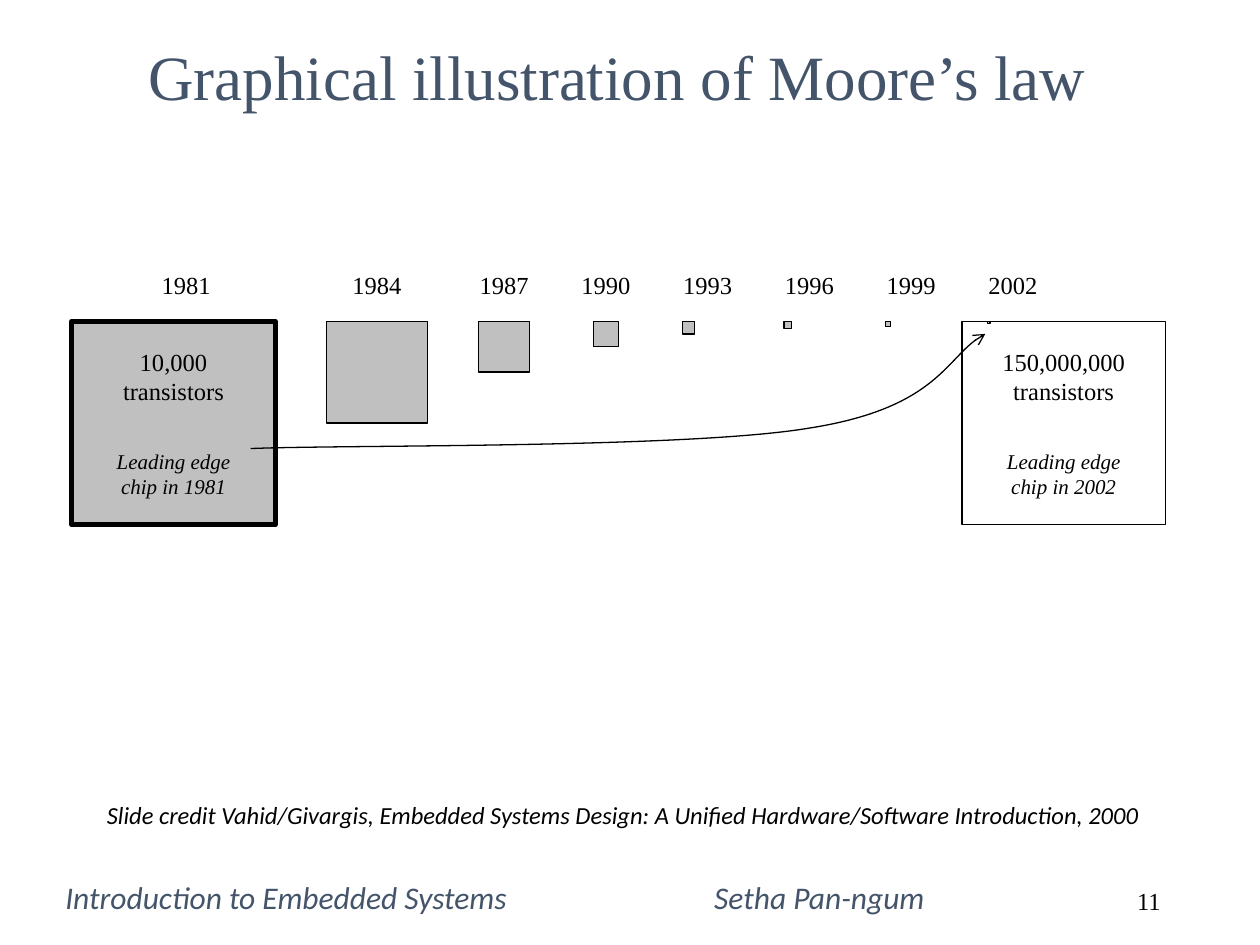
from lxml import etree
from pptx import Presentation
from pptx.dml.color import RGBColor
from pptx.enum.shapes import MSO_SHAPE
from pptx.enum.text import MSO_ANCHOR, PP_ALIGN
from pptx.oxml.ns import qn
from pptx.util import Inches, Pt

RECT = MSO_SHAPE.RECTANGLE
LEFT, CENTER, RIGHT = PP_ALIGN.LEFT, PP_ALIGN.CENTER, PP_ALIGN.RIGHT
TOP, MIDDLE = MSO_ANCHOR.TOP, MSO_ANCHOR.MIDDLE

# Content
TITLE = "Graphical illustration of Moore’s law"
CREDIT = ("Slide credit Vahid/Givargis, Embedded Systems Design: "
          "A Unified Hardware/Software Introduction, 2000")
FOOTER = "Introduction to Embedded Systems\tSetha Pan-ngum"
PAGE = "11"

# Year, label column, label columns wide, square column, square side (grid units)
GENERATIONS = [
    ("1981", 3, 3, 0, 8),
    ("1984", 10, 4, 10, 4),
    ("1987", 15, 4, 16, 2),
    ("1990", 19, 4, 20.5, 1),
    ("1993", 23, 4, 24, 0.5),
    ("1996", 27, 4, 28, 0.3),
    ("1999", 31, 4, 32, 0.2),
    ("2002", 35, 4, 36, 0.1),
]
# Column, transistor count, caption
CHIPS = [
    (0, ["10,000", "transistors"], ["Leading edge", "chip in 1981"]),
    (35, ["150,000,000", "transistors"], ["Leading edge", "chip in 2002"]),
]
# Shrinking curve: start, then control, control, end of each part (inches)
CURVE_START = (1.99, 3.56)
CURVE_PARTS = [
    [(2.72, 3.53), (5.44, 3.56), (6.41, 3.4)],
    [(7.39, 3.25), (7.53, 2.8), (7.82, 2.65)],
]

THEME = {
    "serif": "Times New Roman", "sans": "Calibri",
    "ink": RGBColor(0, 0, 0), "heading": RGBColor(0x44, 0x54, 0x6A),
    "silicon": RGBColor(0xC0, 0xC0, 0xC0),
    "title": 36, "footer": 18, "body": 14, "caption": 12,
    "thin": 0.75, "thick": 3,
}

# Grid: 43 units between the outer edges of the two large chips
GRID_LEFT, GRID_TOP = 0.57, 2.55
UNIT = (9.25 - GRID_LEFT) / 43
CHIP_SIDE, TEXT_ROWS = 8, 3
LABEL_ROW, COUNT_ROW, CAPTION_ROW = -2, 1, 5
FOOTER_TAB = 5.15

prs = Presentation()
prs.slide_width, prs.slide_height = Inches(10), Inches(7.5)
slide = prs.slides.add_slide(prs.slide_layouts[6])


def cell(col, row, cols, rows):
    return (GRID_LEFT + col * UNIT, GRID_TOP + row * UNIT, cols * UNIT, rows * UNIT)


def add_text(box, lines, size, font="serif", color="ink", italic=False,
             align=CENTER, anchor=TOP, inset=(0, 0)):
    frame = slide.shapes.add_textbox(*map(Inches, box)).text_frame
    frame.word_wrap = True
    frame.vertical_anchor = anchor
    frame.margin_left = frame.margin_right = Inches(inset[0])
    frame.margin_top = frame.margin_bottom = Inches(inset[1])
    for index, line in enumerate(lines):
        paragraph = frame.paragraphs[0] if index == 0 else frame.add_paragraph()
        paragraph.alignment = align
        run = paragraph.add_run()
        run.text = line
        run.font.name, run.font.size = THEME[font], Pt(THEME[size])
        run.font.color.rgb, run.font.italic = THEME[color], italic
    return frame


def outline(shape, weight="thin"):
    shape.shadow.inherit = False
    shape.line.color.rgb = THEME["ink"]
    shape.line.width = Pt(THEME[weight])


def add_square(col, side, weight="thin", filled=True):
    square = slide.shapes.add_shape(RECT, *map(Inches, cell(col, 0, side, side)))
    outline(square, weight)
    if filled:
        square.fill.solid()
        square.fill.fore_color.rgb = THEME["silicon"]
    else:
        square.fill.background()


def add_curve(start, parts):
    ends = [tuple(map(Inches, part[-1])) for part in parts]
    builder = slide.shapes.build_freeform(*map(Inches, start))
    builder.add_line_segments(ends, close=False)
    curve = builder.convert_to_shape()
    outline(curve)
    curve.fill.background()
    # Turn each straight segment into a Bezier part
    segments = list(curve._element.iter(qn("a:lnTo")))
    for segment, part in zip(segments, parts):
        segment.tag = qn("a:cubicBezTo")
        segment.clear()
        for x, y in part:
            etree.SubElement(segment, qn("a:pt"), x=str(Inches(x) - curve.left),
                             y=str(Inches(y) - curve.top))
    etree.SubElement(curve.line._get_or_add_ln(), qn("a:tailEnd"), type="arrow")


# Title, credit and footer
margin = (0.1, 0.05)
add_text((1.08, 0.25, 8.17, 1.26), [TITLE], "title", color="heading",
         align=LEFT, inset=margin)
credit = add_text((0.75, 6.33, 8.5, 0.33), [CREDIT], "body", font="sans",
                  italic=True, align=LEFT, inset=margin)
credit.paragraphs[0].line_spacing = 0.9
footer = add_text((0.42, 6.92, 9.08, 0.42), [FOOTER], "footer", font="sans",
                  color="heading", italic=True, align=LEFT, inset=margin)
tabs = etree.SubElement(footer.paragraphs[0]._p.get_or_add_pPr(), qn("a:tabLst"))
etree.SubElement(tabs, qn("a:tab"), pos=str(Inches(FOOTER_TAB)), algn="l")
add_text((7.06, 6.95, 2.25, 0.4), [PAGE], "body", align=RIGHT, anchor=MIDDLE,
         inset=margin)

# One square and one year per generation
for year, label_col, label_cols, square_col, side in GENERATIONS:
    add_square(square_col, side, "thick" if side == CHIP_SIDE else "thin")
    add_text(cell(label_col, LABEL_ROW, label_cols, 2), [year], "body")

# The 2002 chip at full size, and the text in both large chips
add_square(CHIPS[-1][0], CHIP_SIDE, filled=False)
for col, count, caption in CHIPS:
    add_text(cell(col, CAPTION_ROW, CHIP_SIDE, TEXT_ROWS), caption, "caption",
             italic=True)
    add_text(cell(col, COUNT_ROW, CHIP_SIDE, TEXT_ROWS), count, "body")

# Curve from the 1981 chip to its size in 2002
add_curve(CURVE_START, CURVE_PARTS)

prs.save("out.pptx")
